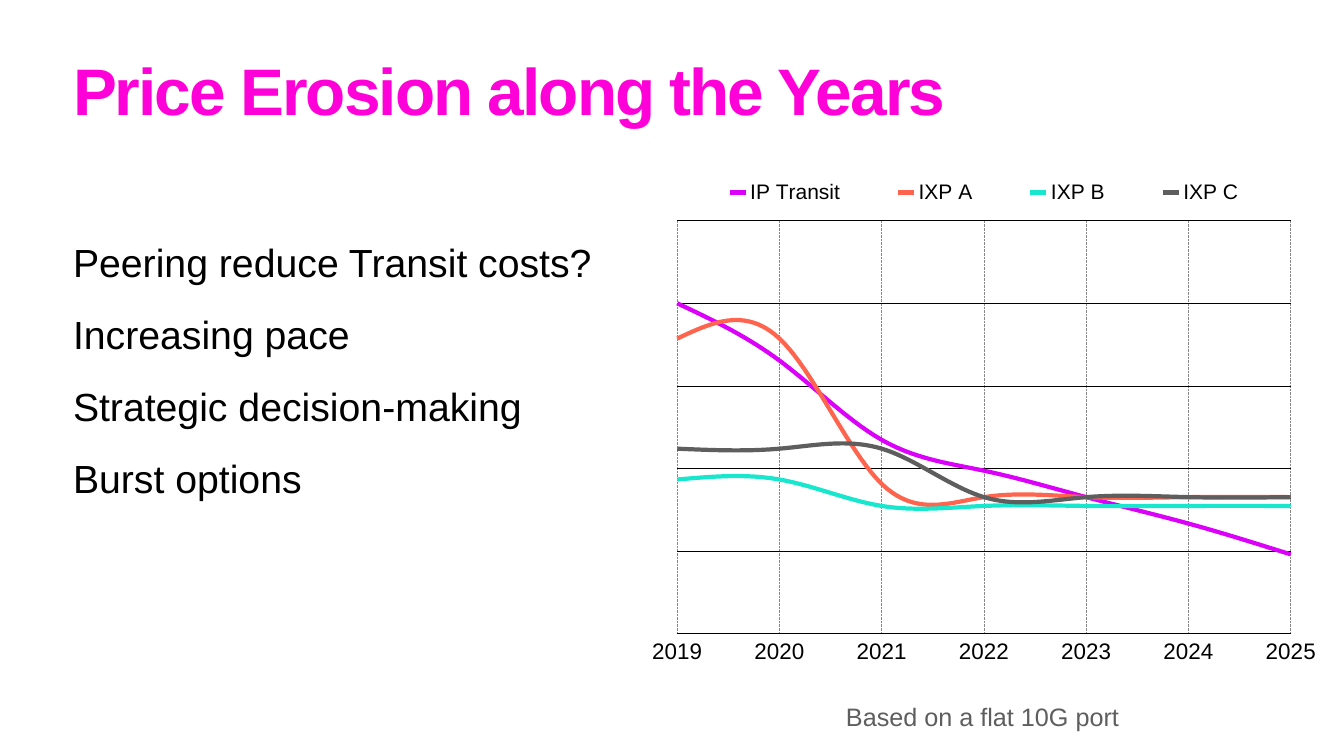
from dataclasses import dataclass

from lxml.etree import SubElement
from pptx import Presentation
from pptx.chart.data import CategoryChartData
from pptx.dml.color import RGBColor
from pptx.enum.chart import XL_CHART_TYPE as ChartType
from pptx.enum.chart import XL_LEGEND_POSITION as LegendPosition
from pptx.enum.chart import XL_MARKER_STYLE as Marker
from pptx.enum.chart import XL_TICK_LABEL_POSITION as LabelPosition
from pptx.enum.chart import XL_TICK_MARK as TickMark
from pptx.enum.dml import MSO_LINE_DASH_STYLE as Dash
from pptx.enum.text import MSO_ANCHOR as Anchor
from pptx.enum.text import MSO_AUTO_SIZE as AutoSize
from pptx.oxml.ns import qn
from pptx.util import Emu, Pt

PX = 914400 / 50.4


@dataclass(frozen=True)
class Theme:
    face: str = "Arial"
    ink: str = "000000"
    muted: str = "5E5E5E"
    grid: str = "888888"
    title_start: str = "FF00D8"
    title_end: str = "FF542E"
    title_size: int = 94
    point_size: int = 56
    note_size: int = 36
    year_size: int = 32
    legend_size: int = 30


PRICES = {
    "IP Transit": ("DB00F9", (100, 87, 69, 62, 56, 50, 43)),
    "IXP A": ("FF644E", (92, 92, 59, 56, 56, 56, 56)),
    "IXP B": ("18E7CD", (60, 60, 54, 54, 54, 54, 54)),
    "IXP C": ("5E5E5E", (67, 67, 67, 56, 56, 56, 56)),
}
YEARS = [str(year) for year in range(2019, 2026)]
POINTS = (
    "Peering reduce Transit costs?",
    "Increasing pace",
    "Strategic decision-making",
    "Burst options",
)


def px(*lengths):
    return [Emu(round(length * PX)) for length in lengths]


class SlideBuilder:
    def __init__(self, slide, theme):
        self.slide = slide
        self.theme = theme

    def style_font(self, font, size, color):
        font.name = self.theme.face
        font.size = Pt(size)
        font.color.rgb = RGBColor.from_string(color)

    def style_line(self, line, color, width):
        line.color.rgb = RGBColor.from_string(color)
        line.width = Pt(width)

    def text(self, box, lines, size, color, anchor=Anchor.TOP, before=0, after=0):
        frame = self.slide.shapes.add_textbox(*px(*box)).text_frame
        frame.word_wrap = True
        frame.vertical_anchor = anchor
        inset, = px(3)
        frame.margin_left = frame.margin_right = inset
        frame.margin_top = frame.margin_bottom = inset
        frame.text = "\n".join(lines)
        for paragraph in frame.paragraphs:
            paragraph.space_before = Pt(before)
            paragraph.space_after = Pt(after)
            self.style_font(paragraph.font, size, color)
        return frame

    def title(self, box, wording):
        theme = self.theme
        frame = self.text(box, [wording], theme.title_size, theme.title_start, Anchor.BOTTOM)
        heading = frame.paragraphs[0]
        heading.line_spacing = 0.8
        heading.font.bold = True
        fill = heading.font.fill
        fill.gradient()
        fill.gradient_angle = 294
        for stop, color in zip(fill.gradient_stops, (theme.title_start, theme.title_end)):
            stop.color.rgb = RGBColor.from_string(color)
        heading.font._element.set("spc", "-280")

    def note(self, box, wording):
        theme = self.theme
        frame = self.text(box, [wording], theme.note_size, theme.muted, Anchor.MIDDLE, before=24)
        frame.word_wrap = False
        frame.auto_size = AutoSize.SHAPE_TO_FIT_TEXT

    def place(self, element, following, x, y, w, h, inner=False):
        for old in element.findall(qn("c:layout")):
            element.remove(old)
        layout = SubElement(element, qn("c:layout"))
        element.find(qn(following)).addprevious(layout)
        manual = SubElement(layout, qn("c:manualLayout"))
        if inner:
            SubElement(manual, qn("c:layoutTarget"), val="inner")
        for edge in ("xMode", "yMode"):
            SubElement(manual, qn(f"c:{edge}"), val="edge")
        for part, share in zip("xywh", (x, y, w, h)):
            SubElement(manual, qn(f"c:{part}"), val=str(share))

    def style_year_axis(self, years):
        theme = self.theme
        years.major_tick_mark = years.minor_tick_mark = TickMark.NONE
        years.tick_label_position = LabelPosition.LOW
        self.style_font(years.tick_labels.font, theme.year_size, theme.ink)
        self.style_line(years.format.line, theme.ink, 1)
        years.has_major_gridlines = True
        self.style_line(years.major_gridlines.format.line, theme.grid, 1)
        years.major_gridlines.format.line.dash_style = Dash.ROUND_DOT

    def style_price_axis(self, price):
        price.minimum_scale, price.maximum_scale = 25, 118.75
        price.major_unit = 18.75
        price.major_tick_mark = price.minor_tick_mark = TickMark.NONE
        price.tick_label_position = LabelPosition.NONE
        price.format.line.fill.background()
        price.has_major_gridlines = True
        self.style_line(price.major_gridlines.format.line, self.theme.ink, 1)
        axis = price._element
        for old in axis.findall(qn("c:crossBetween")):
            axis.remove(old)
        crossing = SubElement(axis, qn("c:crossBetween"), val="midCat")
        axis.find(qn("c:crosses")).addnext(crossing)

    def price_chart(self, box, years, prices):
        theme = self.theme
        data = CategoryChartData()
        data.categories = years
        for name, (_, values) in prices.items():
            data.add_series(name, values)
        chart = self.slide.shapes.add_chart(ChartType.LINE, *px(*box), data).chart
        chart.has_title = False
        self.style_font(chart.font, 10, theme.ink)
        chart.plots[0].vary_by_categories = False
        for series, (color, _) in zip(chart.plots[0].series, prices.values()):
            series.smooth = True
            series.marker.style = Marker.NONE
            self.style_line(series.format.line, color, 6)
        self.style_year_axis(chart.category_axis)
        self.style_price_axis(chart.value_axis)
        chart.has_legend = True
        legend = chart.legend
        legend.position = LegendPosition.TOP
        legend.include_in_layout = True
        self.style_font(legend.font, theme.legend_size, theme.ink)
        self.place(legend._element, "c:overlay", 0.04, 0, 0.92, 0.07)
        plot_area = chart._chartSpace.chart.plotArea
        self.place(plot_area, "c:lineChart", 0.038, 0.091, 0.924, 0.821, inner=True)


def main():
    deck = Presentation()
    deck.slide_width, deck.slide_height = px(1344, 756)
    theme = Theme()
    builder = SlideBuilder(deck.slides.add_slide(deck.slide_layouts[6]), theme)
    builder.title((70, 46, 1177, 85), "Price Erosion along the Years")
    builder.text((70, 235, 582, 465), POINTS, theme.point_size, theme.ink, before=24, after=12)
    builder.price_chart((652, 175, 664, 503), YEARS, PRICES)
    builder.note((843, 699, 283, 35), "Based on a flat 10G port")
    deck.save("out.pptx")


if __name__ == "__main__":
    main()
